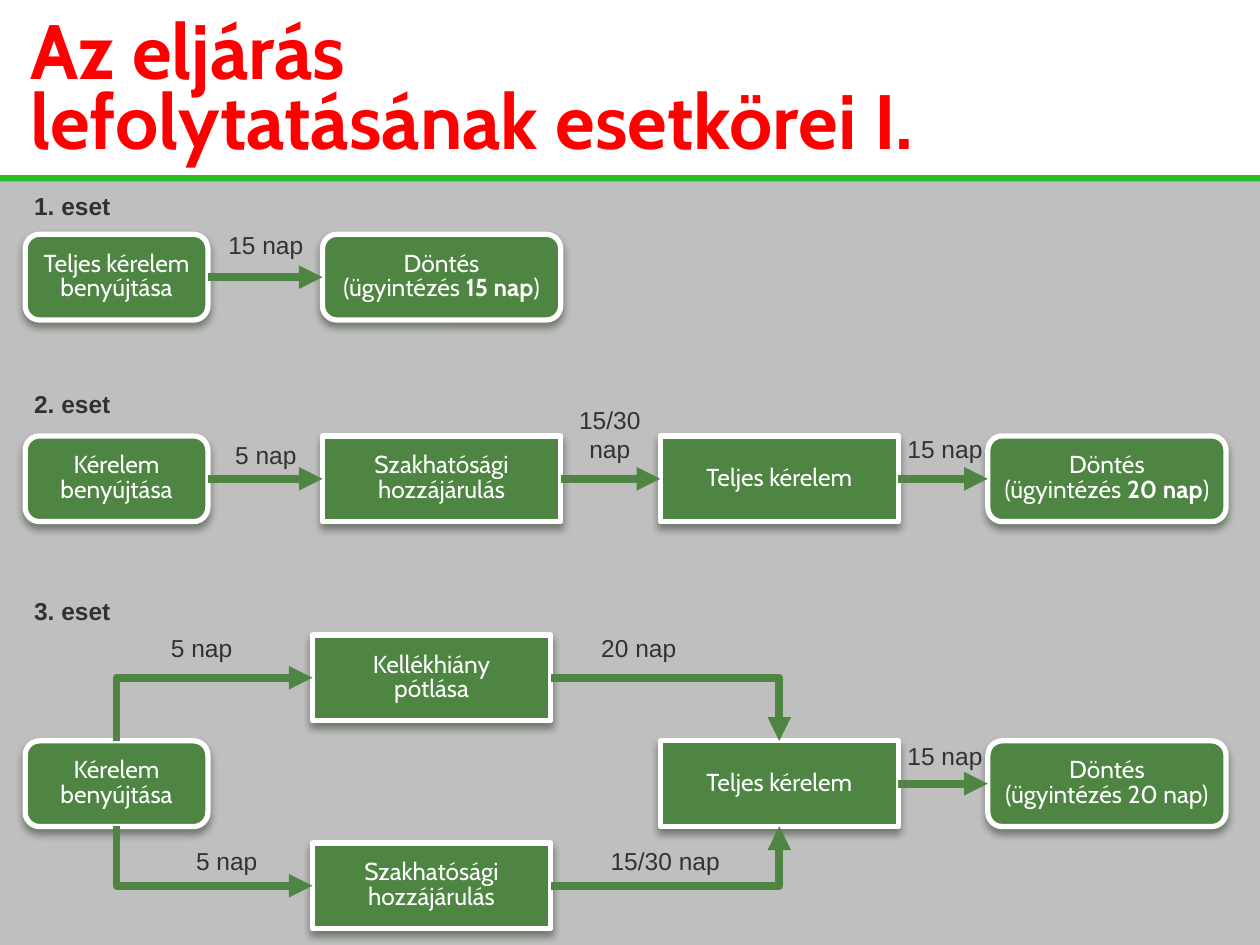
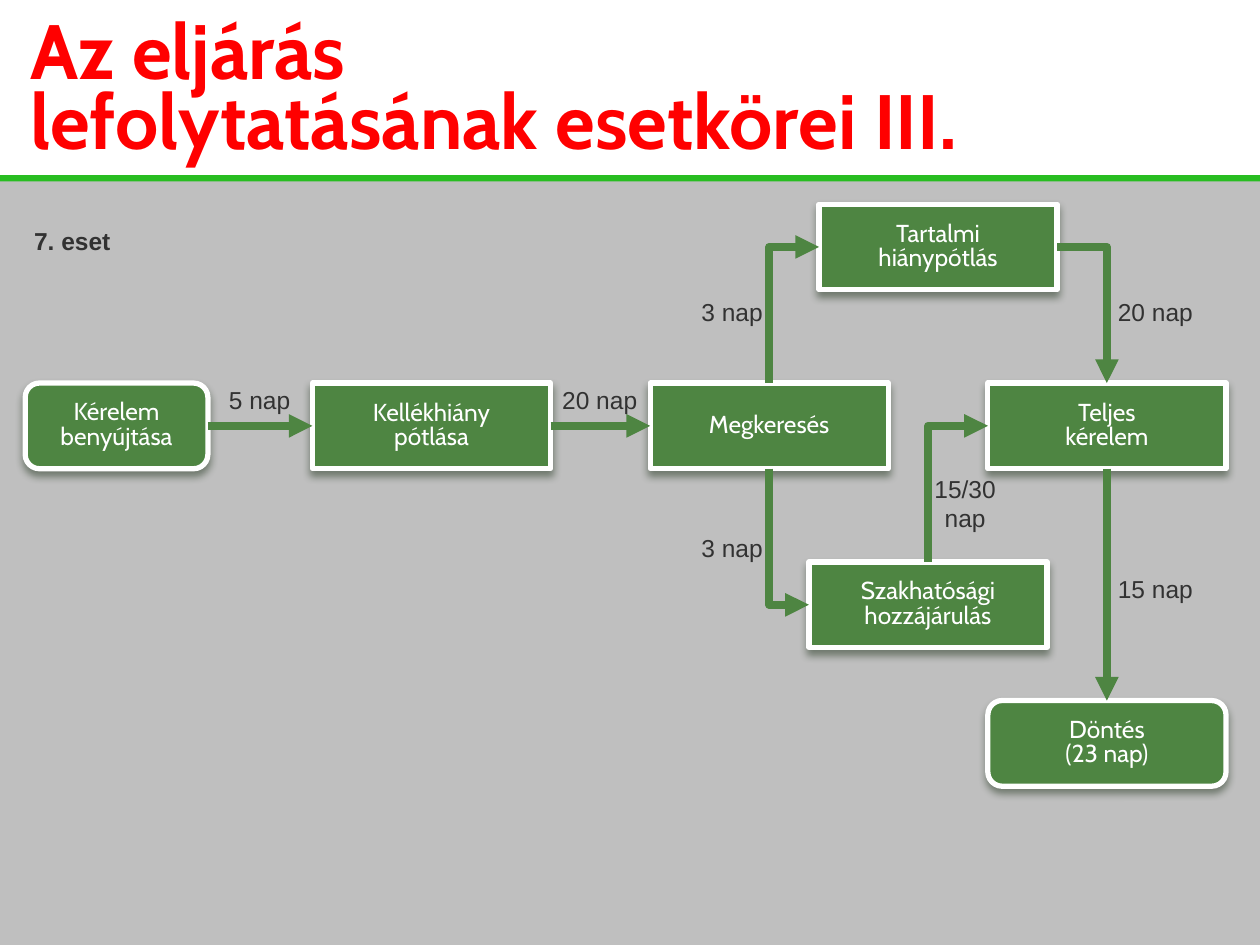
from dataclasses import dataclass

from lxml.etree import SubElement
from pptx import Presentation
from pptx.dml.color import RGBColor
from pptx.enum.shapes import MSO_CONNECTOR, MSO_SHAPE
from pptx.enum.text import MSO_ANCHOR, MSO_AUTO_SIZE, PP_ALIGN
from pptx.oxml.ns import qn
from pptx.util import Inches, Pt


@dataclass(frozen=True)
class Theme:
    title_red: str = "FF0000"
    panel_grey: str = "BFBFBF"
    rule_green: str = "28BD21"
    step_green: str = "4E8542"
    step_shadow: str = "1B2F17"
    label_grey: str = "323232"
    white: str = "FFFFFF"
    black: str = "000000"
    step_font: str = "Cabin"
    label_font: str = "Arial"
    title_size: int = 44
    title_leading: int = 40
    body_size: int = 14
    border: float = 3
    arrow: float = 4.5


THEME = Theme()

# Shared grid, in inches
HEADER_HEIGHT = 1.39
START_LEFT, START_WIDTH = 0.2, 1.45
STEP_WIDTH, STEP_HEIGHT = 1.89, 0.68
LAST_LEFT = 7.84
LABEL_WIDTH, LABEL_HEIGHT = 0.68, 0.32

# Connection sites of the step shapes
TOP, LEFT, BOTTOM, RIGHT = range(4)


# Formatting helpers
def color(code):
    return RGBColor.from_string(code)


def set_insets(frame, left, top, right, bottom):
    frame.margin_left, frame.margin_top = Inches(left), Inches(top)
    frame.margin_right, frame.margin_bottom = Inches(right), Inches(bottom)


def style_runs(paragraph, font_name, size, code):
    for run in paragraph.runs:
        run.font.name, run.font.size = font_name, Pt(size)
        run.font.color.rgb = color(code)


def fill_shadow(effects, code, opacity, blur, distance, degrees):
    shadow = SubElement(effects, qn("a:outerShdw"), blurRad=str(Pt(blur)),
                        dist=str(Pt(distance)), dir=str(degrees * 60000),
                        algn="ctr", rotWithShape="0")
    tint = SubElement(shadow, qn("a:srgbClr"), val=code)
    SubElement(tint, qn("a:alpha"), val=str(opacity * 1000))


# Slide frame: grey panel, green rule and red title
def add_band(slide, height, code):
    band = slide.shapes.add_shape(MSO_SHAPE.RECTANGLE, 0, Inches(HEADER_HEIGHT),
                                  Inches(10), Inches(height))
    band.shadow.inherit = False
    band.fill.solid()
    band.fill.fore_color.rgb = color(code)
    band.line.fill.background()


def set_title(slide, text):
    title = slide.shapes.title
    title.left = title.top = 0
    title.width, title.height = Inches(10), Inches(HEADER_HEIGHT)
    frame = title.text_frame
    frame.text = text
    frame.word_wrap = True
    frame.auto_size = MSO_AUTO_SIZE.NONE
    frame.vertical_anchor = MSO_ANCHOR.MIDDLE
    set_insets(frame, 0.24, 0.12, 0, 0)
    for line in frame.paragraphs:
        line.alignment = PP_ALIGN.LEFT
        line.line_spacing = Pt(THEME.title_leading)
        style_runs(line, THEME.step_font, THEME.title_size, THEME.title_red)
        for run in line.runs:
            run.font.bold = True
            properties = run._r.get_or_add_rPr()
            effects = SubElement(properties, qn("a:effectLst"))
            properties.find(qn("a:solidFill")).addnext(effects)
            fill_shadow(effects, THEME.black, 45, 4, 4, 45)


def add_case_slide(deck, title):
    slide = deck.slides.add_slide(deck.slide_layouts[5])
    add_band(slide, 7.5 - HEADER_HEIGHT, THEME.panel_grey)
    add_band(slide, 0.05, THEME.rule_green)
    set_title(slide, title)
    return slide


# Process steps; text between asterisks is bold
def add_step(slide, left, top, text, outline=MSO_SHAPE.RECTANGLE, width=STEP_WIDTH):
    step = slide.shapes.add_shape(outline, Inches(left), Inches(top),
                                  Inches(width), Inches(STEP_HEIGHT))
    step.fill.solid()
    step.fill.fore_color.rgb = color(THEME.step_green)
    step.line.color.rgb = color(THEME.white)
    step.line.width = Pt(THEME.border)
    step.shadow.inherit = False
    fill_shadow(step._element.spPr.find(qn("a:effectLst")),
                THEME.step_shadow, 48, 4.5, 3, 90)
    frame = step.text_frame
    frame.text = text
    frame.word_wrap = True
    frame.vertical_anchor = MSO_ANCHOR.MIDDLE
    set_insets(frame, 0.04, 0.05, 0.04, 0.05)
    for line in frame.paragraphs:
        pieces = line.text.split("*")
        line.text = pieces[0]
        for number, piece in enumerate(pieces[1:]):
            run = line.add_run()
            run.text = piece
            run.font.bold = number % 2 == 0
        line.alignment = PP_ALIGN.CENTER
        line.line_spacing = Pt(THEME.body_size)
        style_runs(line, THEME.step_font, THEME.body_size, THEME.white)
    return step


def add_start(slide, top, text="Kérelem benyújtása"):
    return add_step(slide, START_LEFT, top, text,
                    MSO_SHAPE.FLOWCHART_ALTERNATE_PROCESS, START_WIDTH)


def add_decision(slide, left, top, text):
    return add_step(slide, left, top, text, MSO_SHAPE.FLOWCHART_ALTERNATE_PROCESS)


# Captions: durations beside the arrows and case headings
def add_caption(slide, left, top, text, width, height, side_inset):
    caption = slide.shapes.add_textbox(Inches(left), Inches(top),
                                       Inches(width), Inches(height))
    frame = caption.text_frame
    frame.text = text
    frame.word_wrap = True
    frame.auto_size = MSO_AUTO_SIZE.SHAPE_TO_FIT_TEXT
    frame.vertical_anchor = MSO_ANCHOR.MIDDLE
    set_insets(frame, side_inset, 0.04, side_inset, 0.04)
    for line in frame.paragraphs:
        style_runs(line, THEME.label_font, THEME.body_size, THEME.label_grey)
    return frame.paragraphs


def add_duration(slide, left, top, text, width=LABEL_WIDTH, height=LABEL_HEIGHT):
    for line in add_caption(slide, left, top, text, width, height, 0.04):
        line.alignment = PP_ALIGN.CENTER


def add_case_heading(slide, top, text):
    for line in add_caption(slide, 0.27, top, text, 1.58, LABEL_HEIGHT, 0):
        line.runs[0].font.bold = True


# Arrows between steps
def site_point(step, site):
    middle_x, middle_y = step.left + step.width // 2, step.top + step.height // 2
    return {TOP: (middle_x, step.top), LEFT: (step.left, middle_y),
            BOTTOM: (middle_x, step.top + step.height),
            RIGHT: (step.left + step.width, middle_y)}[site]


def style_arrow(arrow):
    arrow.line.color.rgb = color(THEME.step_green)
    arrow.line.width = Pt(THEME.arrow)
    properties = arrow._element.spPr
    SubElement(properties.find(qn("a:ln")), qn("a:tailEnd"), type="triangle")
    SubElement(properties, qn("a:effectLst"))


def add_arrow(slide, start, end, start_site=RIGHT, end_site=LEFT):
    arrow = slide.shapes.add_connector(
        MSO_CONNECTOR.STRAIGHT, *site_point(start, start_site), *site_point(end, end_site))
    arrow.begin_connect(start, start_site)
    arrow.end_connect(end, end_site)
    style_arrow(arrow)


def add_elbow(slide, start, end, start_site, end_site):
    """One-corner arrow; leaving from the top or bottom needs a quarter turn."""
    (x1, y1), (x2, y2) = site_point(start, start_site), site_point(end, end_site)
    rotation = {TOP: 90, BOTTOM: 270}.get(start_site, 0)
    if rotation:
        center_x, center_y = (x1 + x2) // 2, (y1 + y2) // 2
        half_rise, half_run = abs(y2 - y1) // 2, (x2 - x1) // 2
        if start_site == TOP:
            half_run = -half_run
        x1, x2 = center_x + half_rise, center_x - half_rise
        y1, y2 = center_y - half_run, center_y + half_run
    arrow = slide.shapes.add_connector(MSO_CONNECTOR.ELBOW, x1, y1, x2, y2)
    properties = arrow._element.spPr
    properties.find(qn("a:prstGeom")).set("prst", "bentConnector2")
    if rotation:
        properties.find(qn("a:xfrm")).set("rot", str(rotation * 60000))
    style_arrow(arrow)


# Slide content
def build_cases_one_to_three(deck):
    slide = add_case_slide(deck, "Az eljárás\nlefolytatásának esetkörei I.")
    authority_text = "Szakhatósági\nhozzájárulás"

    # Case 1
    add_case_heading(slide, 1.47, "1. eset")
    request = add_start(slide, 1.86, "Teljes kérelem benyújtása")
    decision = add_decision(slide, 2.56, 1.86, "Döntés\n(ügyintézés *15 nap*)")
    add_arrow(slide, request, decision)
    add_duration(slide, 1.77, 1.78, "15 nap")

    # Case 2
    add_case_heading(slide, 3.04, "2. eset")
    row = 3.46
    chain = [add_start(slide, row),
             add_step(slide, 2.56, row, authority_text),
             add_step(slide, 5.24, row, "Teljes kérelem"),
             add_decision(slide, LAST_LEFT, row, "Döntés\n(ügyintézés *20 nap*)")]
    for start, end in zip(chain, chain[1:]):
        add_arrow(slide, start, end)
    add_duration(slide, 1.77, 3.45, "5 nap")
    add_duration(slide, 4.37, 3.17, "15/30\nnap", 0.94, 0.55)
    add_duration(slide, 7.16, 3.4, "15 nap")

    # Case 3
    add_case_heading(slide, 4.69, "3. eset")
    row = 5.88
    request = add_start(slide, row)
    supplement = add_step(slide, 2.48, 5.04, "Kellékhiány\vpótlása")
    authority = add_step(slide, 2.48, 6.69, authority_text)
    complete = add_step(slide, 5.24, row, "Teljes kérelem")
    decision = add_decision(slide, LAST_LEFT, row, "Döntés\n(ügyintézés 20 nap)")
    for branch, side in ((supplement, TOP), (authority, BOTTOM)):
        add_elbow(slide, request, branch, side, LEFT)
        add_elbow(slide, branch, complete, RIGHT, side)
    add_arrow(slide, complete, decision)
    add_duration(slide, 1.26, 4.98, "5 nap")
    add_duration(slide, 4.73, 4.98, "20 nap")
    add_duration(slide, 7.16, 5.84, "15 nap")
    add_duration(slide, 1.46, 6.67, "5 nap")
    add_duration(slide, 4.61, 6.67, "15/30 nap", 1.34)


def build_case_seven(deck):
    slide = add_case_slide(deck, "Az eljárás\nlefolytatásának esetkörei III.")
    add_case_heading(slide, 1.75, "7. eset")

    # Steps
    row = 3.04
    request = add_start(slide, row)
    supplement = add_step(slide, 2.48, row, "Kellékhiány\vpótlása")
    inquiry = add_step(slide, 5.16, row, "Megkeresés")
    complete = add_step(slide, LAST_LEFT, row, "Teljes\nkérelem")
    content_fix = add_step(slide, 6.5, 1.62, "Tartalmi\nhiánypótlás")
    authority = add_step(slide, 6.42, 4.46, "Szakhatósági hozzájárulás")
    decision = add_decision(slide, LAST_LEFT, 5.56, "Döntés\v(23 nap)")

    # Arrows
    add_arrow(slide, request, supplement)
    add_arrow(slide, supplement, inquiry)
    add_arrow(slide, complete, decision, BOTTOM, TOP)
    add_elbow(slide, inquiry, content_fix, TOP, LEFT)
    add_elbow(slide, inquiry, authority, BOTTOM, LEFT)
    add_elbow(slide, content_fix, complete, RIGHT, TOP)
    add_elbow(slide, authority, complete, TOP, LEFT)

    # Durations
    add_duration(slide, 1.72, 3.01, "5 nap")
    add_duration(slide, 4.29, 3.01, "20 nap", 0.94)
    add_duration(slide, 5.47, 2.31, "3 nap")
    add_duration(slide, 5.47, 4.19, "3 nap")
    add_duration(slide, 8.7, 2.31, "20 nap", 0.94)
    add_duration(slide, 8.7, 4.51, "15 nap", 0.94)
    add_duration(slide, 7.32, 3.72, "15/30 nap", height=0.55)


def main():
    deck = Presentation()
    deck.slide_width, deck.slide_height = Inches(10), Inches(7.5)
    build_cases_one_to_three(deck)
    build_case_seven(deck)
    deck.save("out.pptx")


if __name__ == "__main__":
    main()
